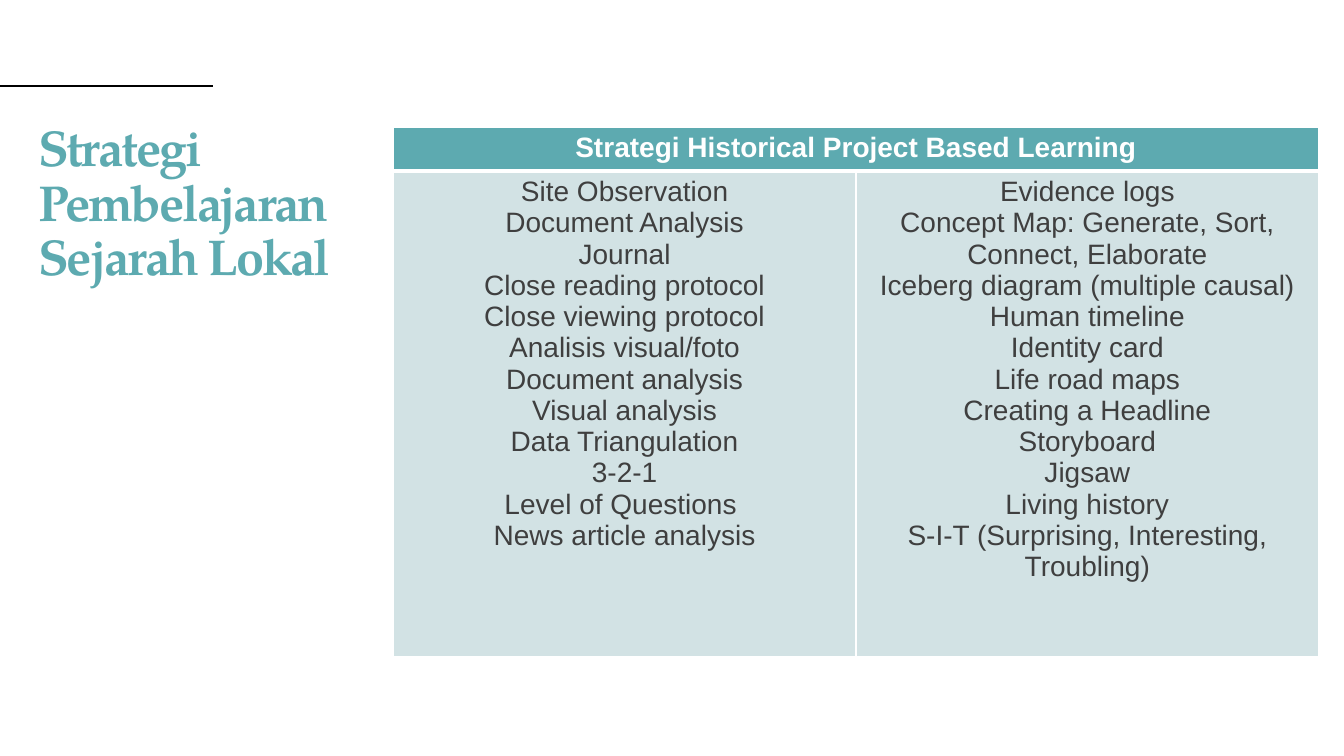
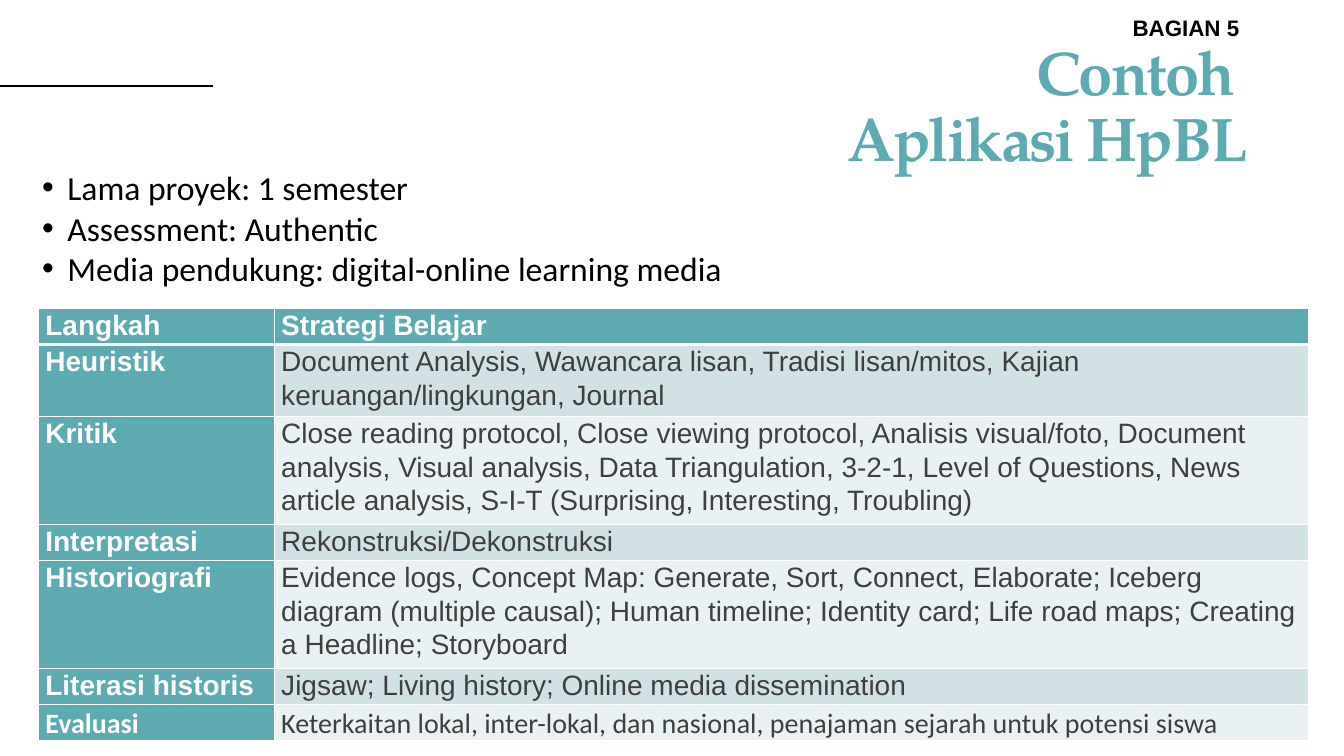
from dataclasses import dataclass

from lxml import etree
from pptx import Presentation
from pptx.dml.color import RGBColor
from pptx.enum.shapes import MSO_CONNECTOR
from pptx.enum.text import MSO_ANCHOR, PP_ALIGN
from pptx.oxml.ns import qn
from pptx.util import Emu, Pt

LEFT, CENTER, RIGHT = PP_ALIGN.LEFT, PP_ALIGN.CENTER, PP_ALIGN.RIGHT
TOP, MIDDLE, BOTTOM = MSO_ANCHOR.TOP, MSO_ANCHOR.MIDDLE, MSO_ANCHOR.BOTTOM
STRAIGHT = MSO_CONNECTOR.STRAIGHT
BLANK = 6
EMU_PER_PX = 9144  # 100 px to the inch


@dataclass(frozen=True)
class Theme:
    teal: str = "5DAAB0"
    band_dark: str = "D2E2E4"
    band_light: str = "EAF1F2"
    white: str = "FFFFFF"
    black: str = "000000"
    body: str = "3F3F3F"
    title_font: str = "TeX Gyre Pagella"
    table_font: str = "Arial"
    list_font: str = "Calibri"
    title_small: int = 36
    title_large: int = 44
    list_size: int = 24
    table_size: int = 20
    label_size: int = 16


THEME = Theme()
TITLE_MARGINS = (0, 5, 10, 5)
DEFAULT_MARGINS = (10, 5, 10, 5)
TIGHT_MARGINS = (7, 0, 7, 0)

PROJECT_HEADER = "Strategi Historical Project Based Learning"
PROJECT_STRATEGIES = [
    ["Site Observation", "Document Analysis", "Journal", "Close reading protocol",
     "Close viewing protocol", "Analisis visual/foto", "Document analysis",
     "Visual analysis", "Data Triangulation", "3-2-1", "Level of Questions ",
     "News article analysis"],
    ["Evidence logs", "Concept Map: Generate, Sort, Connect, Elaborate",
     "Iceberg diagram (multiple causal)", "Human timeline", "Identity card",
     "Life road maps", "Creating a Headline", "Storyboard", "Jigsaw",
     "Living history", "S-I-T (Surprising, Interesting, Troubling)"],
]
PROJECT_FACTS = [
    "Lama proyek: 1 semester",
    "Assessment: Authentic",
    "Media pendukung: digital-online learning media",
]
# step, strategies, row height
LEARNING_STEPS = [
    ("Langkah", "Strategi Belajar", 33),
    ("Heuristik", "Document Analysis, Wawancara lisan, Tradisi lisan/mitos, "
     "Kajian keruangan/lingkungan, Journal", 66),
    ("Kritik", "Close reading protocol, Close viewing protocol, Analisis visual/foto, "
     "Document analysis, Visual analysis, Data Triangulation, 3-2-1, Level of Questions, "
     "News article analysis, S-I-T (Surprising, Interesting, Troubling)", 99),
    ("Interpretasi", "Rekonstruksi/Dekonstruksi", 33),
    ("Historiografi", "Evidence logs, Concept Map: Generate, Sort, Connect, Elaborate; "
     "Iceberg diagram (multiple causal); Human timeline; Identity card; Life road maps; "
     "Creating a Headline; Storyboard", 99),
    ("Literasi historis", "Jigsaw; Living history; Online media dissemination", 33),
    ("Evaluasi", "Keterkaitan lokal, inter-lokal, dan nasional, penajaman sejarah "
     "untuk potensi siswa", 36),
]


def px(length):
    return Emu(length * EMU_PER_PX)


def rgb(color):
    return RGBColor.from_string(color)


def write(frame, text, *, font, size, color, bold=False, align=LEFT,
          line_spacing=None, tracking=None, bullet=None):
    """Fill a text frame; \\n starts a paragraph and \\v breaks a line."""
    frame.text = text
    frame.word_wrap = True
    for paragraph in frame.paragraphs:
        paragraph.alignment = align
        paragraph.line_spacing = line_spacing
        if bullet:
            properties = paragraph._p.get_or_add_pPr()
            properties.set("marL", str(px(25)))
            properties.set("indent", str(px(-25)))
            etree.SubElement(properties, qn("a:buFont")).set("typeface", "Arial")
            etree.SubElement(properties, qn("a:buChar")).set("char", bullet)
        for run in paragraph.runs:
            run.font.name = font
            run.font.size = Pt(size)
            run.font.bold = bold
            run.font.color.rgb = rgb(color)
            if tracking:
                run.font._element.set("spc", str(int(tracking * 100)))


def set_margins(target, margins):
    """Set left, top, right and bottom insets of a text frame or a cell."""
    (target.margin_left, target.margin_top,
     target.margin_right, target.margin_bottom) = map(px, margins)


def add_text(slide, text, box, *, margins=DEFAULT_MARGINS, anchor=TOP, **text_format):
    frame = slide.shapes.add_textbox(*map(px, box)).text_frame
    set_margins(frame, margins)
    frame.vertical_anchor = anchor
    write(frame, text, **text_format)


def add_title(slide, text, box, size, align=LEFT):
    add_text(slide, text, box, margins=TITLE_MARGINS, anchor=MIDDLE,
             font=THEME.title_font, size=size, color=THEME.teal, bold=True,
             align=align, line_spacing=0.9, tracking=-1.5)


def add_slide(deck):
    """Add a slide with the short rule at its upper left."""
    slide = deck.slides.add_slide(deck.slide_layouts[BLANK])
    rule = slide.shapes.add_connector(STRAIGHT, px(211), px(85), px(0), px(85))
    rule.line.color.rgb = rgb(THEME.black)
    rule.line.width = Pt(1.5)
    etree.SubElement(rule._element.spPr, qn("a:effectLst"))
    return slide


def set_borders(cell, row):
    """Draw thin white borders, with a thick one under the header row."""
    widths = {"L": 1, "R": 1, "T": 3 if row == 1 else 1, "B": 3 if row == 0 else 1}
    properties = cell._tc.get_or_add_tcPr()
    for side, width in widths.items():
        line = etree.SubElement(properties, qn(f"a:ln{side}"), w=str(Pt(width)))
        fill = etree.SubElement(line, qn("a:solidFill"))
        etree.SubElement(fill, qn("a:srgbClr")).set("val", THEME.white)


def add_table(slide, left, top, columns, rows):
    """Add a bordered table with the given column widths and row heights."""
    table = slide.shapes.add_table(len(rows), len(columns), px(left), px(top),
                                   px(sum(columns)), px(sum(rows))).table
    table.first_row = table.horz_banding = False
    for column, width in zip(table.columns, columns):
        column.width = px(width)
    for index, (row, height) in enumerate(zip(table.rows, rows)):
        row.height = px(height)
        for cell in row.cells:
            set_borders(cell, index)
    return table


def fill_cell(cell, text, fill, *, heading=False, margins=DEFAULT_MARGINS,
              font=THEME.table_font, **text_format):
    cell.fill.solid()
    cell.fill.fore_color.rgb = rgb(fill)
    set_margins(cell, margins)
    write(cell.text_frame, text, font=font, size=THEME.table_size, bold=heading,
          color=THEME.white if heading else THEME.body, **text_format)


def build_strategies(deck):
    slide = add_slide(deck)
    add_title(slide, "Strategi Pembelajaran Sejarah Lokal", (38, 92, 324, 223),
              THEME.title_small)
    table = add_table(slide, 390, 126, [459, 459], [44, 481])
    table.cell(0, 0).merge(table.cell(0, 1))
    fill_cell(table.cell(0, 0), PROJECT_HEADER, THEME.teal, heading=True, align=CENTER)
    for column, strategies in enumerate(PROJECT_STRATEGIES):
        fill_cell(table.cell(1, column), "\n".join(strategies), THEME.band_dark,
                  align=CENTER)


def build_application(deck):
    slide = add_slide(deck)
    add_title(slide, "Contoh \vAplikasi HpBL", (495, 0, 753, 215),
              THEME.title_large, RIGHT)
    table = add_table(slide, 38, 306, [234, 1026],
                      [height for _, _, height in LEARNING_STEPS])
    for row, (step, strategies, _) in enumerate(LEARNING_STEPS):
        is_header = row == 0
        is_last = row == len(LEARNING_STEPS) - 1
        band = THEME.band_dark if row % 2 else THEME.band_light
        cell_format = dict(margins=TIGHT_MARGINS, line_spacing=1.07,
                           font=THEME.list_font if is_last else THEME.table_font)
        fill_cell(table.cell(row, 0), step, THEME.teal, heading=True, **cell_format)
        fill_cell(table.cell(row, 1), strategies, THEME.teal if is_header else band,
                  heading=is_header, **cell_format)
    add_text(slide, "\n".join(PROJECT_FACTS), (32, 161, 1150, 132),
             font=THEME.list_font, size=THEME.list_size, color=THEME.black, bullet="•")
    add_text(slide, "BAGIAN 5", (801, 0, 438, 46), margins=TITLE_MARGINS, anchor=BOTTOM,
             font=THEME.table_font, size=THEME.label_size, color=THEME.black,
             bold=True, align=RIGHT, line_spacing=0.9)


def main():
    deck = Presentation()
    deck.slide_width, deck.slide_height = px(1333), px(750)
    build_strategies(deck)
    build_application(deck)
    deck.save("out.pptx")


if __name__ == "__main__":
    main()
